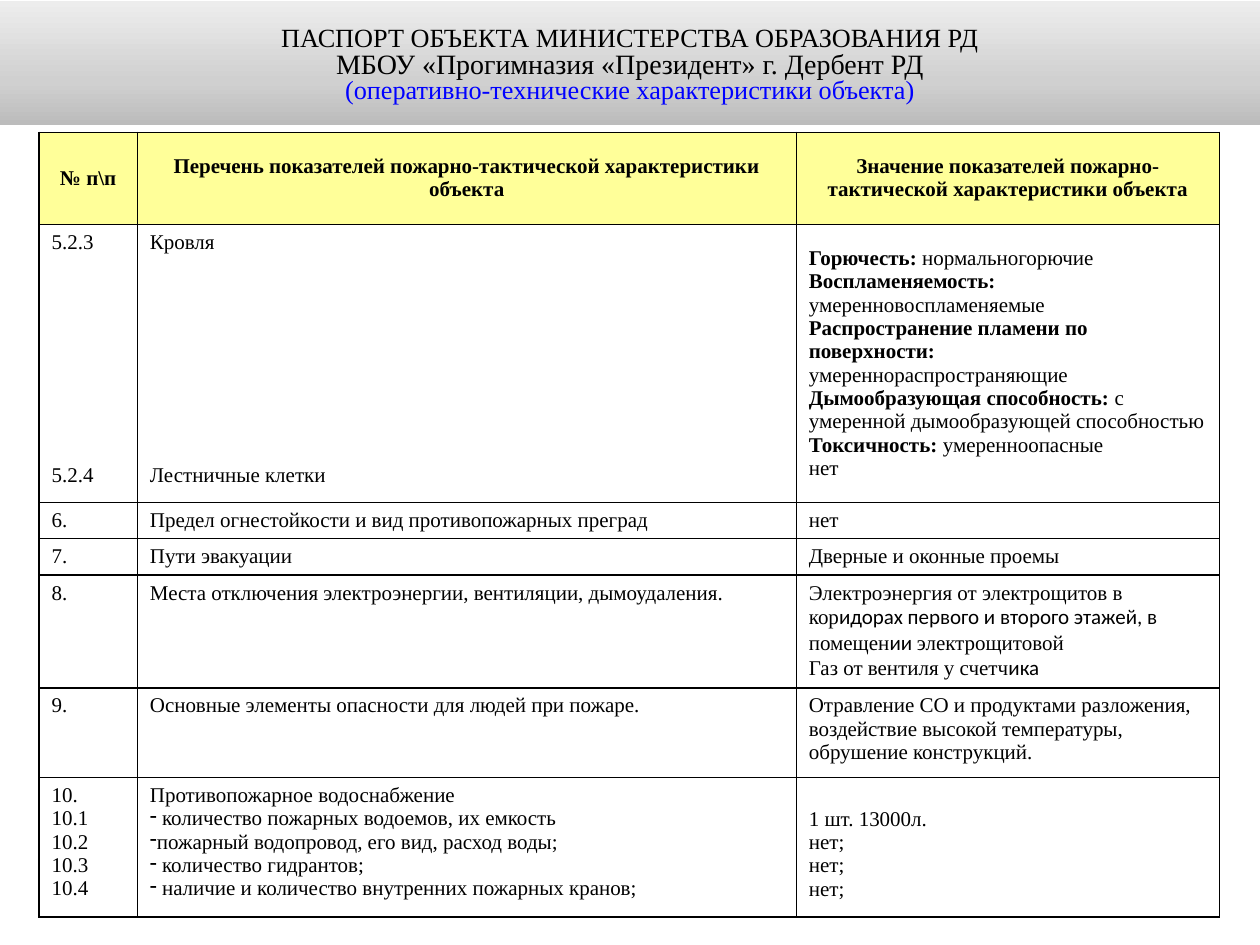
from copy import deepcopy

from lxml import etree
from pptx import Presentation
from pptx.dml.color import RGBColor
from pptx.enum import text
from pptx.oxml import ns
from pptx.util import Inches, Pt

SERIF, SANS = "Times New Roman", "Calibri"


def color(hex_code):
    return RGBColor.from_string(hex_code)


def add_run(paragraph, words, size=12, font=SERIF, bold=False, ink="000000"):
    run = paragraph.add_run()
    run.text = words
    run.font.size = Pt(size)
    run.font.name = font
    run.font.bold = bold
    run.font.color.rgb = color(ink)


prs = Presentation()
prs.slide_width, prs.slide_height = Inches(10), Inches(7.5)
slide = prs.slides.add_slide(prs.slide_layouts[5])

# Title band with a vertical grey gradient
title = slide.shapes.title
title.left, title.top = Inches(0), Inches(0.01)
title.width, title.height = Inches(10), Inches(0.98)
title.fill.gradient()
title.fill.gradient_angle = 90
stop_list = title.fill._fill._gradFill.gsLst
stop_list.append(deepcopy(stop_list[-1]))
for stop, (position, shade) in zip(
    title.fill.gradient_stops, [(0, "BCBCBC"), (0.35, "D0D0D0"), (1, "EDEDED")]
):
    stop.position = position
    stop.color.rgb = color(shade)

heading = title.text_frame
heading.word_wrap = True
heading.auto_size = text.MSO_AUTO_SIZE.NONE
heading.vertical_anchor = text.MSO_ANCHOR.MIDDLE
heading.margin_left = heading.margin_right = Inches(0.09)
heading_lines = [
    ("ПАСПОРТ ОБЪЕКТА МИНИСТЕРСТВА ОБРАЗОВАНИЯ РД", 15, "000000", 1.0),
    ("МБОУ «Прогимназия «Президент» г. Дербент РД", 16, "000000", 0.8),
    ("(оперативно-технические характеристики объекта)", 15, "0000FF", 0.8),
]
for i, (words, size, ink, spacing) in enumerate(heading_lines):
    paragraph = heading.add_paragraph() if i else heading.paragraphs[0]
    paragraph.alignment = text.PP_ALIGN.CENTER
    paragraph.line_spacing = spacing
    add_run(paragraph, words, size, ink=ink)

# Table content: a cell lists paragraphs, a paragraph lists (words, font, bold)
bullet_lines = [
    " количество пожарных водоемов, их емкость",
    "пожарный водопровод, его вид, расход воды;",
    " количество гидрантов;",
    " наличие и количество внутренних пожарных кранов;",
]
roof_values = [
    [("Горючесть:", SERIF, True), (" нормальногорючие", SERIF, False)],
    [("Воспламеняемость: ", SERIF, True), ("умеренновоспламеняемые", SERIF, False)],
    [("Распространение пламени по поверхности:", SERIF, True)],
    "умереннораспространяющие",
    [("Дымообразующая способность: ", SERIF, True),
     ("с умеренной дымообразующей способностью", SERIF, False)],
    [("Токсичность:", SERIF, True), (" умеренноопасные", SERIF, False)],
    "нет",
]
shutoff_values = [
    [("Электроэнергия от электрощитов в кор", SERIF, False),
     ("идорах первого и второго этажей, в ", SANS, False),
     ("помещен", SERIF, False), ("ии ", SANS, False),
     ("электрощитовой", SERIF, False)],
    [("Газ от вентиля у счетч", SERIF, False), ("ика", SANS, False)],
]
rows = [
    (0.73, ["№ п\\п"],
     ["Перечень показателей пожарно-тактической характеристики объекта"],
     ["Значение показателей пожарно-тактической характеристики объекта"]),
    (2.21, ["5.2.3", "5.2.4"], ["Кровля", "Лестничные клетки"], roof_values),
    (0.28, ["6."], ["Предел огнестойкости и вид противопожарных преград"], ["нет"]),
    (0.29, ["7."], ["Пути эвакуации"], ["Дверные и оконные проемы"]),
    (0.89, ["8."], ["Места отключения электроэнергии, вентиляции, дымоудаления."],
     shutoff_values),
    (0.71, ["9."], ["Основные элементы опасности для людей при пожаре."],
     ["Отравление СО и продуктами разложения, воздействие высокой температуры, "
      "обрушение конструкций."]),
    (1.11, ["10.", "10.1", "10.2", "10.3", "10.4"],
     ["Противопожарное водоснабжение", *bullet_lines],
     ["1 шт. 13000л.", "нет;", "нет;", "нет;"]),
]
col_widths = [0.78, 5.23, 3.36]

# Table grid
passport = slide.shapes.add_table(
    len(rows), len(col_widths), Inches(0.31), Inches(1.05),
    Inches(sum(col_widths)), Inches(sum(row[0] for row in rows)),
).table
passport.horz_banding = False
passport.first_row = False
for column, width in zip(passport.columns, col_widths):
    column.width = Inches(width)

# Cells
for r, (height, *contents) in enumerate(rows):
    passport.rows[r].height = Inches(height)
    for c, paragraphs in enumerate(contents):
        cell = passport.cell(r, c)
        header = r == 0
        cell.fill.solid()
        cell.fill.fore_color.rgb = color("FFFF99" if header else "FFFFFF")
        if header or paragraphs is roof_values:
            cell.vertical_anchor = text.MSO_ANCHOR.MIDDLE
        for i, content in enumerate(paragraphs):
            frame = cell.text_frame
            paragraph = frame.add_paragraph() if i else frame.paragraphs[0]
            paragraph.alignment = (
                text.PP_ALIGN.CENTER if header else text.PP_ALIGN.LEFT
            )
            if isinstance(content, str):
                content = [(content, SERIF, header)]
            for words, font, bold in content:
                add_run(paragraph, words, font=font, bold=bold)
            if content[0][0] in bullet_lines:
                bullet = etree.SubElement(
                    paragraph._p.get_or_add_pPr(), ns.qn("a:buChar")
                )
                bullet.set("char", "-")
        # Thin black borders come before the fill in the cell properties
        for k, side in enumerate(["a:lnL", "a:lnR", "a:lnT", "a:lnB"]):
            border = etree.Element(ns.qn(side), w=str(Pt(1)))
            ink = etree.SubElement(border, ns.qn("a:solidFill"))
            etree.SubElement(ink, ns.qn("a:srgbClr"), val="000000")
            cell._tc.get_or_add_tcPr().insert(k, border)

# Gaps that line the entries up across columns
for c in range(2):
    passport.cell(1, c).text_frame.paragraphs[1].space_before = Pt(120)
passport.cell(6, 2).margin_top = Inches(0.24)

prs.save("out.pptx")
